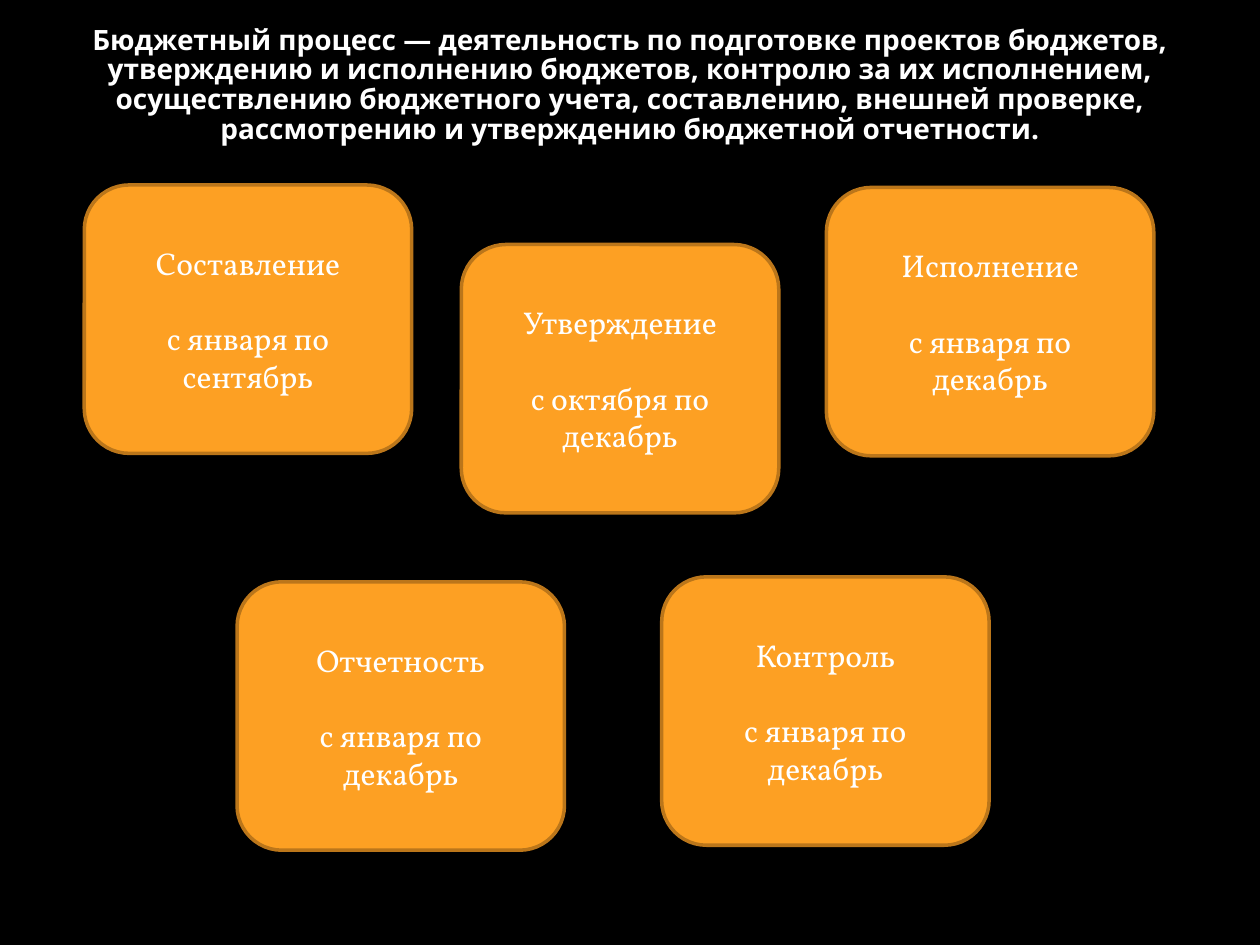
from pptx import Presentation
from pptx.dml.color import RGBColor
from pptx.enum.shapes import MSO_SHAPE as Shape
from pptx.enum.text import MSO_ANCHOR as Anchor, MSO_AUTO_SIZE as Fit, PP_ALIGN as Align
from pptx.util import Cm, Pt

BLACK = RGBColor(0x00, 0x00, 0x00)
WHITE = RGBColor(0xFF, 0xFF, 0xFF)
AMBER = RGBColor(0xFD, 0xA0, 0x23)
BROWN = RGBColor(0xBB, 0x76, 0x1A)

TITLE = (
    "Бюджетный процесс\u00a0— деятельность по подготовке проектов бюджетов, "
    "утверждению и исполнению бюджетов, контролю за их исполнением, "
    "осуществлению бюджетного учета, составлению, внешней проверке, "
    "рассмотрению и утверждению бюджетной отчетности."
)

# Stage name, term, left, top, width in cm
WIDE, HIGH = 6.6, 5.41
STAGES = [
    ("Составление", "с января по сентябрь", 1.7, 3.73, WIDE),
    ("Утверждение", "с октября по декабрь", 9.3, 4.93, 6.4),
    ("Исполнение", "с января по декабрь", 16.66, 3.78, WIDE),
    ("Отчетность", "с января по декабрь", 4.78, 11.73, WIDE),
    ("Контроль", "с января по декабрь", 13.34, 11.63, WIDE),
]


def add_run(para, text, font, size, bold=False):
    para.alignment = Align.CENTER
    run = para.add_run()
    run.text = text
    run.font.name = font
    run.font.size = Pt(size)
    run.font.bold = bold
    run.font.color.rgb = WHITE


def set_title(slide):
    title = slide.shapes.title
    title.left, title.top = Cm(1.27), Cm(0.33)
    title.width, title.height = Cm(22.86), Cm(2.8)
    frame = title.text_frame
    frame.word_wrap = True
    frame.auto_size = Fit.NONE
    frame.vertical_anchor = Anchor.MIDDLE
    para = frame.paragraphs[0]
    para.line_spacing = 0.88
    add_run(para, TITLE, "Noto Sans", 16, True)


def add_stage(slide, name, term, left, top, width):
    box = slide.shapes.add_shape(
        Shape.ROUNDED_RECTANGLE, Cm(left), Cm(top), Cm(width), Cm(HIGH)
    )
    box.shadow.inherit = False
    box.fill.solid()
    box.fill.fore_color.rgb = AMBER
    box.line.color.rgb = BROWN
    box.line.width = Pt(2)
    frame = box.text_frame
    frame.word_wrap = True
    frame.vertical_anchor = Anchor.MIDDLE
    add_run(frame.paragraphs[0], name, "Vollkorn", 18)
    # One line of space sets the term apart from the name
    para = frame.add_paragraph()
    para.space_before = Pt(21.5)
    add_run(para, term, "Vollkorn", 18)


def main():
    deck = Presentation()
    deck.slide_width, deck.slide_height = Cm(25.4), Cm(19.05)
    slide = deck.slides.add_slide(deck.slide_layouts[5])

    # Background and heading
    back = slide.background.fill
    back.solid()
    back.fore_color.rgb = BLACK
    set_title(slide)

    # Stages of the budget process
    for stage in STAGES:
        add_stage(slide, *stage)

    deck.save("out.pptx")


if __name__ == "__main__":
    main()
